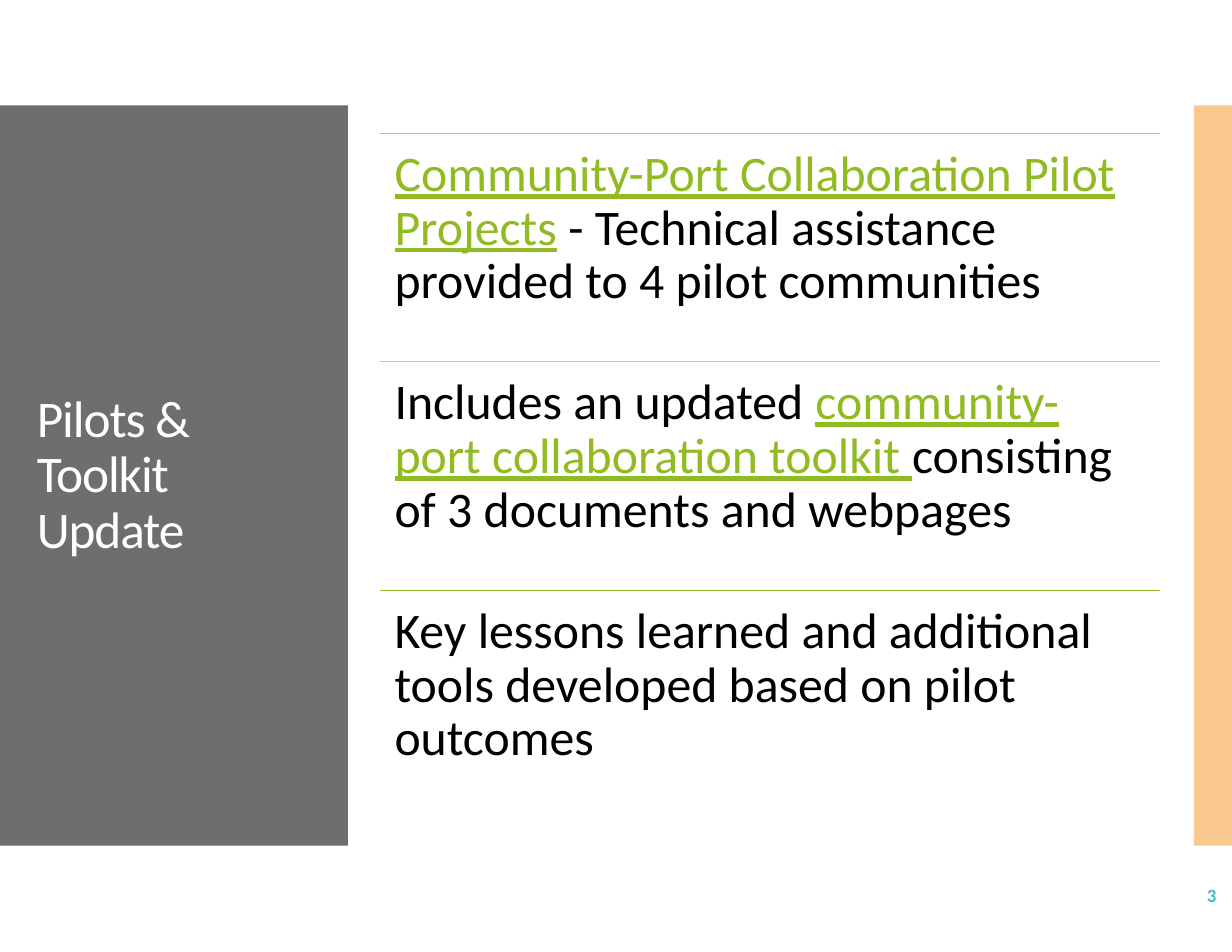
from dataclasses import dataclass

import pptx
import pptx.dml.color
import pptx.enum.shapes
import pptx.enum.text
import pptx.oxml
import pptx.oxml.ns
import pptx.util
from pptx.slide import Slide
from pptx.util import Pt

FONT = "Calibri"
LINK = "90BB23"
LIST_LEFT, LIST_TOP, LIST_WIDTH = 244, 85.7, 502
ROW_HEIGHT = 146.88
PANEL_TOP, PANEL_HEIGHT = 67.7, 476


@dataclass
class Span:
    text: str
    color: str = "000000"
    underline: bool = False


@dataclass
class Row:
    rule_color: str
    spans: list[Span]


@dataclass
class Area:
    left: float
    top: float
    width: float
    height: float

    def lengths(self) -> list[pptx.util.Length]:
        return [Pt(value) for value in (self.left, self.top, self.width, self.height)]


ROWS = [
    Row("FAB900", [
        Span("Community-Port Collaboration Pilot Projects", LINK, True),
        Span(" - Technical assistance provided to 4 pilot communities"),
    ]),
    Row("D7D913", [
        Span("Includes an updated "),
        Span("community-port collaboration toolkit ", LINK, True),
        Span("consisting of 3 documents and webpages"),
    ]),
    Row("90BB23", [
        Span("Key lessons learned and additional tools developed based on pilot outcomes"),
    ]),
]


def paint(color_format, color: str) -> None:
    """Set a font, line or fill to a solid hex colour."""
    if hasattr(color_format, "solid"):
        color_format.solid()
        color_format = color_format.fore_color
    else:
        color_format = color_format.color
    color_format.rgb = pptx.dml.color.RGBColor.from_string(color)


def add_panel(page: Slide, area: Area, color: str, opacity: int = 100) -> None:
    panel = page.shapes.add_shape(
        pptx.enum.shapes.MSO_SHAPE.RECTANGLE, *area.lengths())
    panel.shadow.inherit = False
    paint(panel.fill, color)
    panel.line.fill.background()
    if opacity < 100:
        fill_color = panel.fill._xPr.find(".//" + pptx.oxml.ns.qn("a:srgbClr"))
        alpha = pptx.oxml.parse_xml(
            f'<a:alpha {pptx.oxml.ns.nsdecls("a")} val="{opacity * 1000}"/>')
        fill_color.append(alpha)


def add_rule(page: Slide, top: float, color: str) -> None:
    rule = page.shapes.add_connector(
        pptx.enum.shapes.MSO_CONNECTOR.STRAIGHT,
        Pt(LIST_LEFT), Pt(top), Pt(LIST_LEFT + LIST_WIDTH), Pt(top))
    paint(rule.line, color)
    rule.line.width = Pt(0.85)
    rule._element.spPr.append(
        pptx.oxml.parse_xml(f'<a:effectLst {pptx.oxml.ns.nsdecls("a")}/>'))


def add_text(page: Slide, area: Area, spans: list[Span], *, size: float,
             margins: tuple[float, float] = (7.2, 3.6), middle: bool = False,
             right: bool = False, bold: bool = False, line_spacing: float = 1.0,
             tracking: float = 0) -> None:
    """Add one paragraph; margins are (left and right, top and bottom)."""
    box = page.shapes.add_textbox(*area.lengths())
    frame = box.text_frame
    frame.word_wrap = True
    frame.margin_left = frame.margin_right = Pt(margins[0])
    frame.margin_top = frame.margin_bottom = Pt(margins[1])
    anchors = pptx.enum.text.MSO_ANCHOR
    frame.vertical_anchor = anchors.MIDDLE if middle else anchors.TOP
    para = frame.paragraphs[0]
    para.line_spacing = line_spacing
    aligns = pptx.enum.text.PP_ALIGN
    para.alignment = aligns.RIGHT if right else aligns.LEFT
    for span in spans:
        run = para.add_run()
        run.text = span.text
        run.font.name = FONT
        run.font.size = Pt(size)
        run.font.bold = bold
        run.font.underline = span.underline
        paint(run.font.fill, span.color)
        if tracking:
            run.font._element.set("spc", str(round(tracking * 100)))


def main() -> None:
    deck = pptx.Presentation()
    deck.slide_width, deck.slide_height = Pt(792), Pt(612)
    page = deck.slides.add_slide(deck.slide_layouts[6])

    add_panel(page, Area(0, PANEL_TOP, 223.7, PANEL_HEIGHT), "6E6E6E")
    add_panel(page, Area(767.5, PANEL_TOP, 24.5, PANEL_HEIGHT), "F79421", opacity=50)
    add_text(page, Area(16.6, 106.6, 191.5, 399),
             [Span("Pilots & Toolkit Update", "FFFFFF")],
             size=33, middle=True, line_spacing=0.9, tracking=-0.7)
    add_text(page, Area(690.5, 559.5, 99.4, 31.7), [Span("3", "40BAD2")],
             size=12.1, margins=(7.9, 4), middle=True, right=True, bold=True)

    for index, row in enumerate(ROWS):
        top = LIST_TOP + index * ROW_HEIGHT
        add_rule(page, top, row.rule_color)
        add_text(page, Area(LIST_LEFT, top, LIST_WIDTH, ROW_HEIGHT), row.spans,
                 size=32, margins=(9.6, 9.6), line_spacing=0.9)

    deck.save("out.pptx")


if __name__ == "__main__":
    main()
